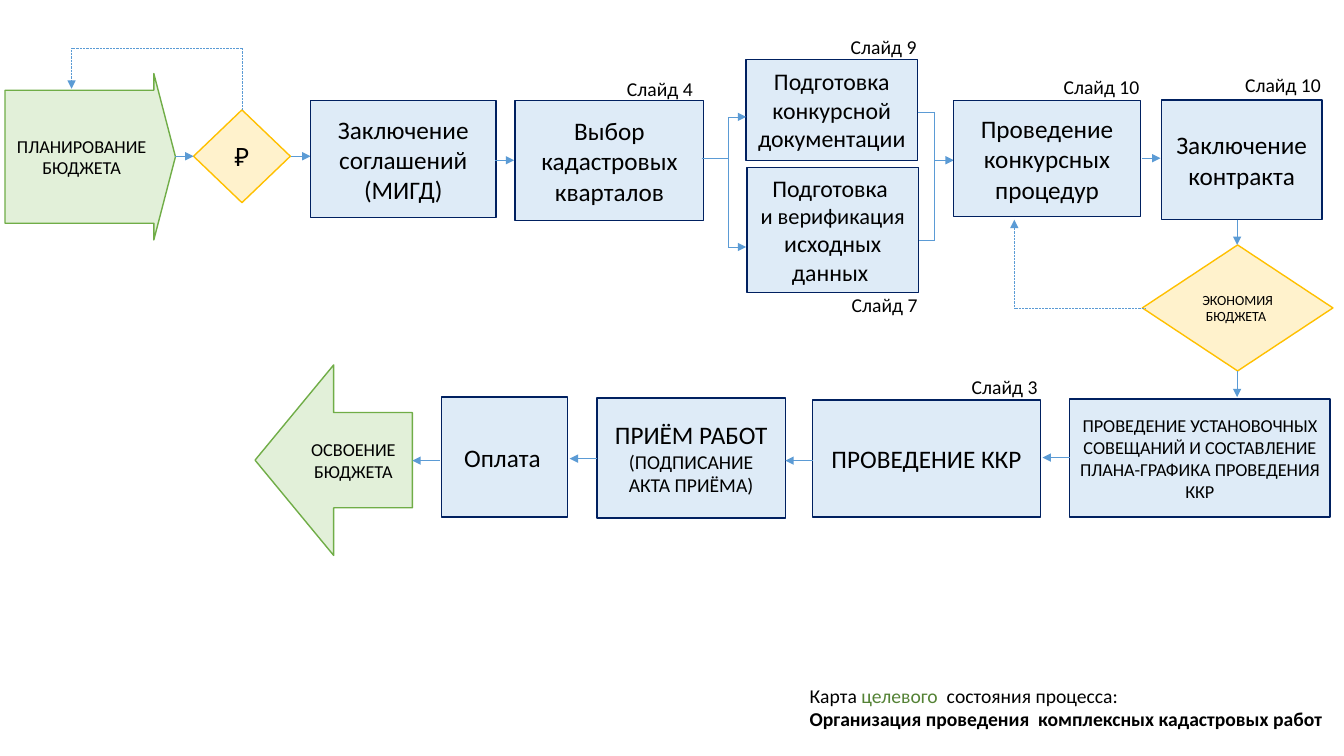
from lxml import etree
from pptx import Presentation
from pptx.dml.color import RGBColor
from pptx.enum.dml import MSO_LINE
from pptx.enum.shapes import MSO_CONNECTOR, MSO_SHAPE
from pptx.enum.text import MSO_ANCHOR, MSO_AUTO_SIZE, PP_ALIGN
from pptx.oxml.ns import qn
from pptx.util import Inches, Pt

RECT, DIAMOND = MSO_SHAPE.RECTANGLE, MSO_SHAPE.DIAMOND
RIGHT, LEFT = MSO_SHAPE.RIGHT_ARROW, MSO_SHAPE.LEFT_ARROW
STRAIGHT, DOTS = MSO_CONNECTOR.STRAIGHT, MSO_LINE.ROUND_DOT
MIDDLE, TOP = MSO_ANCHOR.MIDDLE, MSO_ANCHOR.TOP
COLORS = {
    "text": "000000", "accent": "548235", "link": "5B9BD5",
    "step": "DEEBF7", "step_line": "002060",
    "money": "FFF2CC", "money_line": "FFC000",
    "goal": "E2F0D9", "goal_line": "70AD47",
}
KINDS = {RECT: "step", DIAMOND: "money", RIGHT: "goal", LEFT: "goal"}


def color(name):
    """Return the named colour."""
    return RGBColor.from_string(COLORS[name])


def write(shape, *paras, size=14, align=PP_ALIGN.CENTER, anchor=MIDDLE):
    """Fill a shape with paragraphs; a paragraph is a string or a list of (text, format)."""
    frame = shape.text_frame
    frame.auto_size = MSO_AUTO_SIZE.NONE
    frame.word_wrap = True
    frame.vertical_anchor = anchor
    for i, runs in enumerate(paras):
        para = frame.add_paragraph() if i else frame.paragraphs[0]
        para.alignment = align
        for text, style in [(runs, {})] if isinstance(runs, str) else runs:
            run = para.add_run()
            run.text = text
            font = run.font
            font.name = "Calibri"
            font.size = Pt(style.get("size", size))
            font.bold = style.get("bold", False)
            font.color.rgb = color(style.get("color", "text"))


def node(slide, form, x, y, w, h, *paras, size=18):
    """Add a filled flowchart shape with centred text."""
    shape = slide.shapes.add_shape(form, Inches(x), Inches(y), Inches(w), Inches(h))
    shape.shadow.inherit = False
    shape.fill.solid()
    shape.fill.fore_color.rgb = color(KINDS[form])
    shape.line.color.rgb = color(KINDS[form] + "_line")
    shape.line.width = Pt(1)
    write(shape, *paras, size=size)
    return shape


def label(slide, right, y, number):
    """Add a slide reference that ends at the given right edge."""
    box = slide.shapes.add_textbox(Inches(right - 1.04), Inches(y), Inches(1.04), Inches(0.34))
    write(box, f"Слайд {number}", align=PP_ALIGN.RIGHT, anchor=TOP)


def link(slide, *points, head=True, dotted=False):
    """Join points with thin lines, with an arrowhead at the last one."""
    for i, (start, end) in enumerate(zip(points, points[1:]), 2):
        line = slide.shapes.add_connector(STRAIGHT, *map(Inches, start + end))
        line.line.color.rgb = color("link")
        line.line.width = Pt(0.5)
        if dotted:
            line.line.dash_style = DOTS
        if head and i == len(points):
            tail = etree.SubElement(line.line._get_or_add_ln(), qn("a:tailEnd"))
            tail.set("type", "triangle")
        etree.SubElement(line._element.spPr, qn("a:effectLst"))


def plan(slide, x, y):
    """Draw budget planning with its return loop."""
    arrow = node(slide, RIGHT, x, y + 0.25, 1.69, 1.65, "ПЛАНИРОВАНИЕ БЮДЖЕТА", size=13)
    arrow.adjustments[0], arrow.adjustments[1] = 0.8, 0.13
    node(slide, DIAMOND, x + 1.87, y + 0.61, 0.96, 0.92, "₽")
    mid = y + 1.07
    link(slide, (x + 1.69, mid), (x + 1.87, mid))
    link(slide, (x + 2.84, mid), (x + 3.03, mid))
    link(slide, (x + 2.35, y + 0.61), (x + 2.35, y), (x + 0.66, y), (x + 0.66, y + 0.4),
         dotted=True)


def prepare(slide, x, y):
    """Draw agreements, the choice of quarters and the two parallel preparations."""
    node(slide, RECT, x, y + 0.41, 1.84, 1.16, "Заключение соглашений", "(МИГД)")
    node(slide, RECT, x + 2.03, y + 0.41, 1.87, 1.19, "Выбор кадастровых кварталов")
    node(slide, RECT, x + 4.32, y, 1.7, 1, "Подготовка конкурсной документации", size=17)
    node(slide, RECT, x + 4.33, y + 1.07, 1.7, 1.24, "Подготовка ",
         [("и верификация ", {"size": 16}), ("исходных данных ", {})], size=17)
    label(slide, x + 3.89, y + 0.12, 4)
    label(slide, x + 6.11, y - 0.29, 9)
    label(slide, x + 6.12, y + 2.27, 7)
    fork, merge = x + 4.14, x + 6.19
    link(slide, (x + 1.83, y + 1), (x + 2.02, y + 1))
    link(slide, (x + 3.88, y + 0.98), (fork, y + 0.98), head=False)
    for end in (0.57, 1.86):
        link(slide, (fork, y + 0.98), (fork, y + end), (x + 4.32, y + end))
    link(slide, (x + 6.02, y + 0.52), (merge, y + 0.52), (merge, y + 1.79),
         (x + 6.03, y + 1.79), head=False)
    link(slide, (merge, y + 1), (x + 6.38, y + 1))


def tender(slide, x, y):
    """Draw tender, contract and the budget savings loop."""
    node(slide, RECT, x, y + 0.01, 1.85, 1.15, "Проведение конкурсных процедур")
    node(slide, RECT, x + 2.06, y, 1.59, 1.19, "Заключение контракта")
    node(slide, DIAMOND, x + 1.87, y + 1.44, 1.89, 1.25, "ЭКОНОМИЯ БЮДЖЕТА ", size=10)
    label(slide, x + 1.94, y - 0.3, 10)
    label(slide, x + 3.74, y - 0.32, 10)
    mid = x + 2.81
    link(slide, (x + 1.87, y + 0.58), (x + 2.05, y + 0.58))
    link(slide, (mid, y + 1.19), (mid, y + 1.44))
    link(slide, (mid, y + 2.69), (mid, y + 2.95))
    link(slide, (x + 1.9, y + 2.07), (x + 0.6, y + 2.07), (x + 0.6, y + 1.19), dotted=True)


def works(slide, x, y):
    """Draw the lower row from kick-off meetings to budget use."""
    node(slide, LEFT, x, y, 1.56, 1.89, "ОСВОЕНИЕ БЮДЖЕТА", size=13)
    node(slide, RECT, x + 1.85, y + 0.32, 1.25, 1.19, [("Оплата", {}), (" ", {"size": 14})])
    node(slide, RECT, x + 3.39, y + 0.33, 1.87, 1.19, "ПРИЁМ РАБОТ",
         [("(ПОДПИСАНИЕ АКТА ПРИЁМА)", {"size": 14})])
    node(slide, RECT, x + 5.53, y + 0.35, 2.26, 1.16, "ПРОВЕДЕНИЕ ККР")
    node(slide, RECT, x + 8.08, y + 0.34, 2.58, 1.17,
         "ПРОВЕДЕНИЕ УСТАНОВОЧНЫХ СОВЕЩАНИЙ И СОСТАВЛЕНИЕ ПЛАНА-ГРАФИКА ПРОВЕДЕНИЯ ККР",
         size=13)
    label(slide, x + 7.86, y + 0.05, 3)
    for start, drop in ((1.83, 0.95), (3.39, 0.93), (5.53, 0.95), (8.08, 0.92)):
        link(slide, (x + start, y + drop), (x + start - 0.27, y + drop))


def caption(slide, x, y, w, h):
    """Place the slide title in the lower right corner."""
    title = slide.shapes.title
    title.left, title.top, title.width, title.height = map(Inches, (x, y, w, h))
    write(title,
          [("Карта ", {}), ("целевого", {"color": "accent"}), ("  состояния процесса:", {})],
          [("Организация проведения  комплексных кадастровых работ", {"bold": True})],
          align=PP_ALIGN.LEFT, anchor=TOP)


def main():
    """Build and save the process map."""
    deck = Presentation()
    deck.slide_width, deck.slide_height = Inches(13.33), Inches(7.5)
    slide = deck.slides.add_slide(deck.slide_layouts[5])
    plan(slide, 0.05, 0.48)
    prepare(slide, 3.08, 0.59)
    tender(slide, 9.46, 0.99)
    works(slide, 2.53, 3.62)
    caption(slide, 7.93, 6.73, 5.3, 0.57)
    deck.save("out.pptx")


if __name__ == "__main__":
    main()
